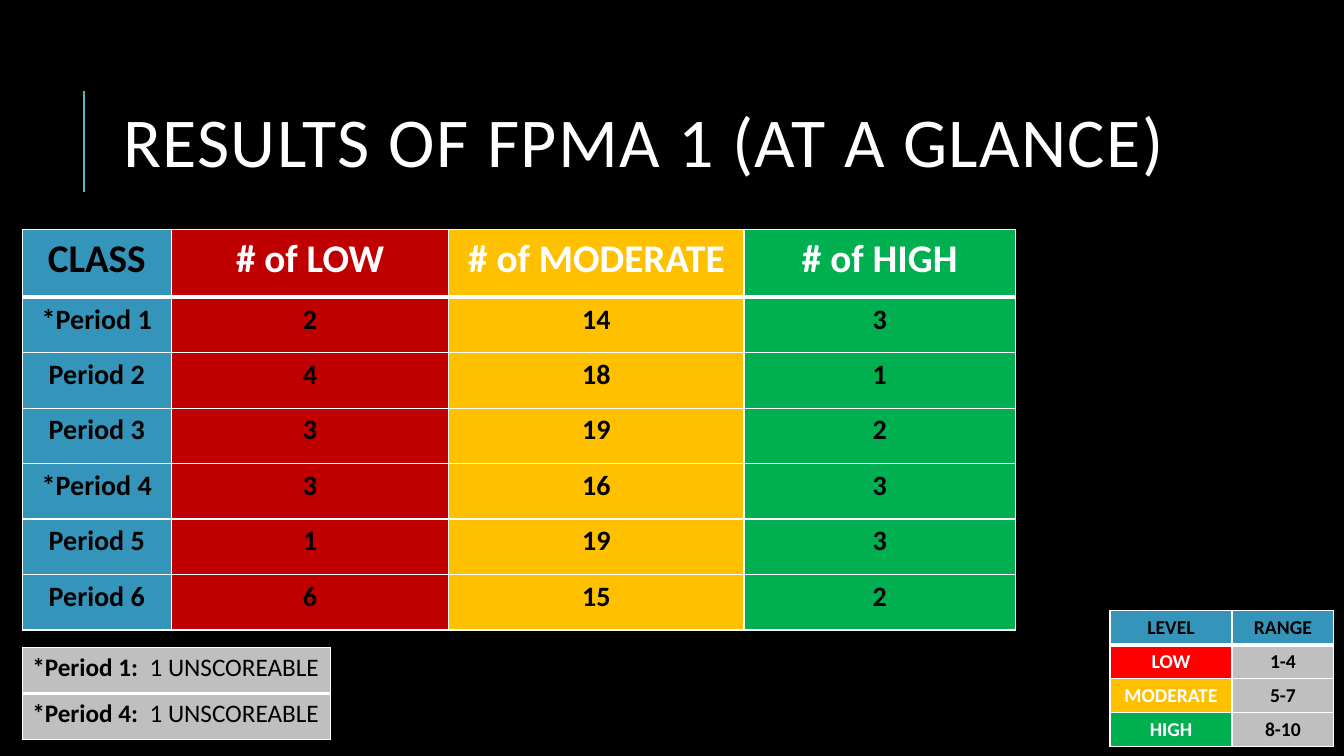
from lxml.etree import SubElement
from pptx import Presentation
from pptx.dml.color import RGBColor
from pptx.enum.shapes import MSO_CONNECTOR
from pptx.enum.text import MSO_ANCHOR, MSO_AUTO_SIZE, PP_ALIGN
from pptx.oxml.ns import qn
from pptx.util import Inches, Pt

BLACK = RGBColor(0x00, 0x00, 0x00)
WHITE = RGBColor(0xFF, 0xFF, 0xFF)
TEAL = RGBColor(0x58, 0xB6, 0xC0)
BLUE = RGBColor(0x34, 0x94, 0xBA)
DARK_RED = RGBColor(0xC0, 0x00, 0x00)
RED = RGBColor(0xFF, 0x00, 0x00)
AMBER = RGBColor(0xFF, 0xC0, 0x00)
GREEN = RGBColor(0x00, 0xB0, 0x50)
GREY = RGBColor(0xBF, 0xBF, 0xBF)

CLASS_FILLS = [BLUE, DARK_RED, AMBER, GREEN]
RESULTS = [
    ["CLASS", "# of LOW", "# of MODERATE", "# of HIGH"],
    ["*Period 1", "2", "14", "3"],
    ["Period 2", "4", "18", "1"],
    ["Period 3", "3", "19", "2"],
    ["*Period 4", "3", "16", "3"],
    ["Period 5", "1", "19", "3"],
    ["Period 6", "6", "15", "2"],
]
NOTES = [("*Period 1:  ", "1 UNSCOREABLE"), ("*Period 4:  ", "1 UNSCOREABLE")]
LEVELS = [("LOW", "1-4", RED), ("MODERATE", "5-7", AMBER), ("HIGH", "8-10", GREEN)]


def add_run(p, text, size, color, **extra):
    """Add a formatted Calibri run to a paragraph."""
    r = p.add_run()
    r.text = text
    r.font.color.rgb = color
    for name, value in {"name": "Calibri", "size": Pt(size), **extra}.items():
        setattr(r.font, name, value)
    return r


def add_title(s, text):
    """Place and format the slide title."""
    sp = s.shapes.title
    box = {"left": 1.12, "top": 0.64, "width": 10.63, "height": 1.64}
    for name, value in box.items():
        setattr(sp, name, Inches(value))
    frame = {"word_wrap": True, "auto_size": MSO_AUTO_SIZE.NONE,
             "vertical_anchor": MSO_ANCHOR.MIDDLE}
    for name, value in frame.items():
        setattr(sp.text_frame, name, value)
    p = sp.text_frame.paragraphs[0]
    p.alignment, p.line_spacing = PP_ALIGN.LEFT, 0.8
    r = add_run(p, text, 50, WHITE)
    r.font._element.set("spc", "100")


def add_accent(s):
    """Draw the thin vertical line beside the title."""
    x = Inches(0.83)
    line = s.shapes.add_connector(MSO_CONNECTOR.STRAIGHT, x, Inches(1.9), x, Inches(0.9))
    line.line.color.rgb = TEAL
    line.line.width = Pt(1.5)
    SubElement(line._element.spPr, qn("a:effectLst"))


def set_borders(cell, top, bottom):
    """Give a cell white borders, with top and bottom widths in points."""
    tc_pr = cell._tc.get_or_add_tcPr()
    for side, width in {"L": 1, "R": 1, "T": top, "B": bottom}.items():
        ln = SubElement(tc_pr, qn(f"a:ln{side}"), w=str(Pt(width)))
        fill = SubElement(ln, qn("a:solidFill"))
        SubElement(fill, qn("a:srgbClr"), val=str(WHITE))


def fill_cell(cell, runs, fill, size, color, align):
    """Write runs of (text, bold) into a cell and colour it."""
    cell.fill.solid()
    cell.fill.fore_color.rgb = fill
    p = cell.text_frame.paragraphs[0]
    p.alignment = align
    for text, bold in runs:
        add_run(p, text, size, color, bold=bold)


def add_grid(s, left, top, widths, heights, rows, align=PP_ALIGN.CENTER):
    """Add a table whose rows hold (runs, fill, size, color) cells."""
    frame = s.shapes.add_table(len(heights), len(widths), Inches(left), Inches(top),
                               Inches(sum(widths)), Inches(sum(heights)))
    table = frame.table
    for column, width in zip(table.columns, widths):
        column.width = Inches(width)
    for i, (row, height) in enumerate(zip(rows, heights)):
        table.rows[i].height = Inches(height)
        for j, content in enumerate(row):
            cell = table.cell(i, j)
            set_borders(cell, 3 if i == 1 else 1, 3 if i == 0 else 1)
            fill_cell(cell, *content, align)


def add_results(s):
    """Add the table of scores by class period."""
    rows = []
    for i, texts in enumerate(RESULTS):
        size = 20 if i else 28
        rows.append([([(text, True)], fill, size, WHITE if i == 0 and j else BLACK)
                     for j, (text, fill) in enumerate(zip(texts, CLASS_FILLS))])
    add_grid(s, 0.22, 2.28, [1.48, 2.75, 2.93, 2.69], [0.67] + [0.55] * 6, rows)


def add_notes(s):
    """Add the table of unscoreable papers."""
    rows = [[([(period, True), (note, False)], GREY, 18, BLACK)] for period, note in NOTES]
    add_grid(s, 0.22, 6.42, [3.06], [0.46] * 2, rows, PP_ALIGN.LEFT)


def add_levels(s):
    """Add the key of levels and score ranges."""
    rows = [[([(text, True)], BLUE, 14, BLACK) for text in ("LEVEL", "RANGE")]]
    for level, span, fill in LEVELS:
        rows.append([([(level, True)], fill, 14, WHITE), ([(span, True)], GREY, 14, BLACK)])
    add_grid(s, 11.01, 6.06, [1.21, 1.01], [0.29] * 4, rows)


def main():
    """Build and save the slide."""
    prs = Presentation()
    prs.slide_width, prs.slide_height = Inches(13.33), Inches(7.5)
    s = prs.slides.add_slide(prs.slide_layouts[5])
    s.background.fill.solid()
    s.background.fill.fore_color.rgb = BLACK
    add_accent(s)
    add_title(s, "RESULTS OF FPMA 1 (AT A GLANCE)")
    add_results(s)
    add_notes(s)
    add_levels(s)
    prs.save("out.pptx")


if __name__ == "__main__":
    main()
